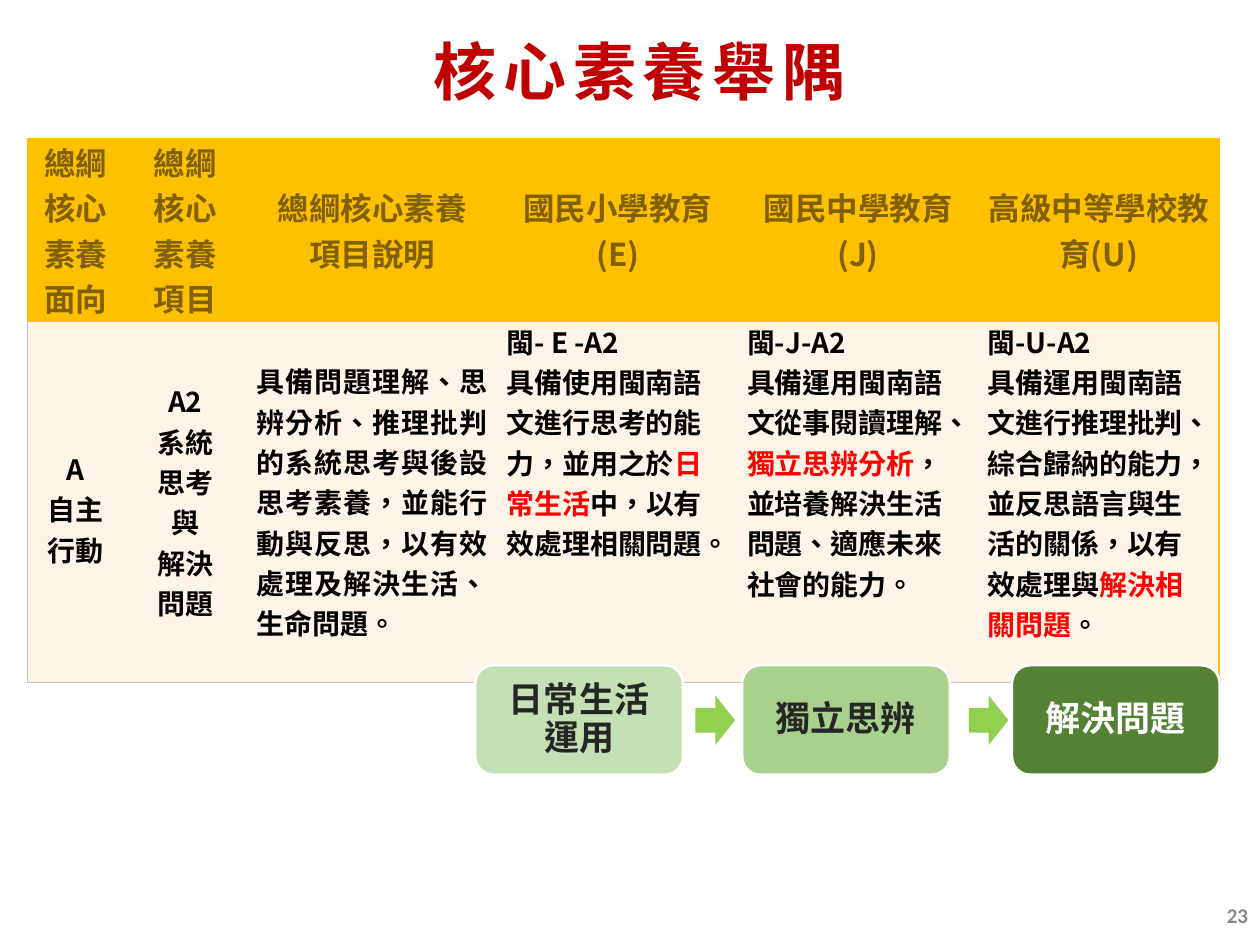
from lxml import etree
from pptx import Presentation
from pptx.dml.color import RGBColor
from pptx.enum.shapes import MSO_SHAPE
from pptx.enum.text import MSO_ANCHOR, PP_ALIGN
from pptx.oxml.ns import qn
from pptx.util import Cm, Pt

# Content: a cell is a list of paragraphs, a paragraph a list of spans;
# a span in a tuple is highlighted
TITLE = "核心素養舉隅"
PAGE_NUMBER = "23"
HEADERS = [
    ["總綱核心素養面向"],
    ["總綱", "核心", "素養", "項目"],
    ["總綱核心素養", "項目說明"],
    ["國民小學教育", "(E)"],
    ["國民中學教育", "(J)"],
    ["高級中等學校教育(U)"],
]
DETAILS = [
    ["A", "自主行動"],
    ["A2", "系統", "思考", "與", "解決", "問題"],
    ["具備問題理解、思辨分析、推理批判的系統思考與後設思考素養，並能行動與反思，以有效處理及解決生活、生命問題。"],
    ["閩- E -A2", ["具備使用閩南語文進行思考的能力，並用之於", ("日常生活",),
                  "中，以有效處理相關問題。"]],
    ["閩-J-A2", ["具備運用閩南語文從事閱讀理解、", ("獨立思辨分析",),
                "，並培養解決生活問題、適應未來社會的能力。"]],
    ["閩-U-A2", ["具備運用閩南語文進行推理批判、綜合歸納的能力，並反思語言與生活的關係，以有效處理與",
                ("解決相關問題",), "。"]],
]
STEPS = [  # text, fill, text colour, left edge
    ("日常生活運用", "pale", "dark", 9.58),
    ("獨立思辨", "light", "dark", 14.96),
    ("解決問題", "deep", "white", 20.4),
]
ARROW_LEFTS = [14.02, 19.53]

COLORS = {
    "title": "C00000", "gold": "FFC000", "brown": "806000", "cream": "FFF4E7",
    "black": "000000", "red": "FF0000", "grey": "898989", "rule": "BFBFBF",
    "pale": "C5E0B4", "light": "A9D18E", "deep": "548235", "arrow": "92D050",
    "dark": "262626", "white": "FFFFFF",
}
FONT = "Noto Sans CJK SC"
COLUMN_WIDTHS = [1.93, 2.49, 5.05, 4.85, 4.85, 4.85]
ROW_HEIGHTS = [3.05, 7.29]
CENTER, LEFT, JUSTIFY = PP_ALIGN.CENTER, PP_ALIGN.LEFT, PP_ALIGN.JUSTIFY


def color(name):
    return RGBColor.from_string(COLORS[name])


def paint(fill, name):
    fill.solid()
    fill.fore_color.rgb = color(name)


def write(frame, paragraphs, size, ink, align=CENTER, font=FONT):
    """Fill a text frame with bold paragraphs."""
    for index, content in enumerate(paragraphs):
        para = frame.paragraphs[0] if index == 0 else frame.add_paragraph()
        para.alignment = align
        para.font.name, para.font.size, para.font.bold = font, Pt(size), True
        para.font.color.rgb = color(ink)
        defaults = para._p.pPr.find(qn("a:defRPr"))
        east_asian = etree.SubElement(defaults, qn("a:ea"))
        east_asian.set("typeface", font)
        defaults.find(qn("a:latin")).addnext(east_asian)
        for part in [content] if isinstance(content, str) else content:
            span = para.add_run()
            span.text = part if isinstance(part, str) else part[0]
            span._r.get_or_add_rPr().set("lang", "zh-TW")
            if isinstance(part, tuple):
                span.font.color.rgb = color("red")


def set_borders(cell, edges):
    """Draw the given edges (tag: colour, points); hide the others."""
    properties = cell._tc.get_or_add_tcPr()
    for position, tag in enumerate(["lnL", "lnR", "lnT", "lnB"]):
        line = etree.Element(qn(f"a:{tag}"))
        if tag in edges:
            name, width = edges[tag]
            line.set("w", str(Pt(width)))
            solid = etree.SubElement(line, qn("a:solidFill"))
            etree.SubElement(solid, qn("a:srgbClr")).set("val", COLORS[name])
        else:
            etree.SubElement(line, qn("a:noFill"))
        properties.insert(position, line)


def add_block(page, kind, left, top, width, height, fill):
    block = page.shapes.add_shape(kind, Cm(left), Cm(top), Cm(width), Cm(height))
    block.shadow.inherit = False
    paint(block.fill, fill)
    block.line.fill.background()
    return block


def add_title(page):
    title = page.shapes.title
    title.left, title.top, title.width, title.height = Cm(1.12), Cm(0.36), Cm(23.55), Cm(2.29)
    title.text_frame.vertical_anchor = MSO_ANCHOR.MIDDLE
    write(title.text_frame, [TITLE], 36, "title")
    para = title.text_frame.paragraphs[0]
    para.line_spacing = 0.9
    para.runs[0]._r.rPr.set("spc", "400")


def add_competency_table(page):
    frame = page.shapes.add_table(2, len(HEADERS), Cm(0.56), Cm(2.79),
                                  Cm(sum(COLUMN_WIDTHS)), Cm(sum(ROW_HEIGHTS)))
    table = frame.table
    table.horz_banding = False
    for column, width in zip(table.columns, COLUMN_WIDTHS):
        column.width = Cm(width)
    for row, height in zip(table.rows, ROW_HEIGHTS):
        row.height = Cm(height)

    last = len(HEADERS) - 1
    aligns = [CENTER, CENTER, JUSTIFY, LEFT, LEFT, LEFT]
    for row, texts in enumerate([HEADERS, DETAILS]):
        for column, paragraphs in enumerate(texts):
            cell = table.cell(row, column)
            header = row == 0
            cell.margin_left = cell.margin_right = Cm(0.18 if row and column > 2 else 0.2)
            cell.margin_top = cell.margin_bottom = 0
            top_aligned = row and column not in (1, 2)
            cell.vertical_anchor = MSO_ANCHOR.TOP if top_aligned else MSO_ANCHOR.MIDDLE
            if row and column == 0:
                cell.margin_top = Cm(2.57)
            paint(cell.fill, "gold" if header else "cream")
            write(cell.text_frame, paragraphs, 18 if header else 16,
                  "brown" if header else "black", CENTER if header else aligns[column])
            edges = {"lnT": ("gold", 1)}
            if not header:
                edges["lnB"] = ("rule", 0.5)
            if column == 0:
                edges["lnL"] = ("gold", 1) if header else ("rule", 0.5)
            if column == last:
                edges["lnR"] = ("gold", 1)
            set_borders(cell, edges)


def add_steps(page):
    for text, fill, ink, left in STEPS:
        box = add_block(page, MSO_SHAPE.ROUNDED_RECTANGLE, left, 13.41, 4.19, 2.21, fill)
        box.line.color.rgb = color("white")
        box.line.width = Pt(1.5)
        box.text_frame.word_wrap = True
        box.text_frame.vertical_anchor = MSO_ANCHOR.MIDDLE
        box.text_frame.margin_left = box.text_frame.margin_right = Cm(0.4)
        write(box.text_frame, [text], 20, ink)
        box.text_frame.paragraphs[0].line_spacing = 0.9
    for left in ARROW_LEFTS:
        add_block(page, MSO_SHAPE.RIGHT_ARROW, left, 14.02, 0.8, 1, "arrow")


def add_page_number(page):
    box = page.shapes.add_textbox(Cm(19.69), Cm(17.93), Cm(5.72), Cm(1.02))
    box.text_frame.word_wrap = True
    box.text_frame.vertical_anchor = MSO_ANCHOR.MIDDLE
    write(box.text_frame, [PAGE_NUMBER], 12, "grey", PP_ALIGN.RIGHT, "Calibri")


def main():
    deck = Presentation()
    deck.slide_width, deck.slide_height = Cm(25.4), Cm(19.05)
    page = deck.slides.add_slide(deck.slide_layouts[5])
    add_title(page)
    add_competency_table(page)
    add_page_number(page)
    add_steps(page)
    deck.save("out.pptx")


if __name__ == "__main__":
    main()
